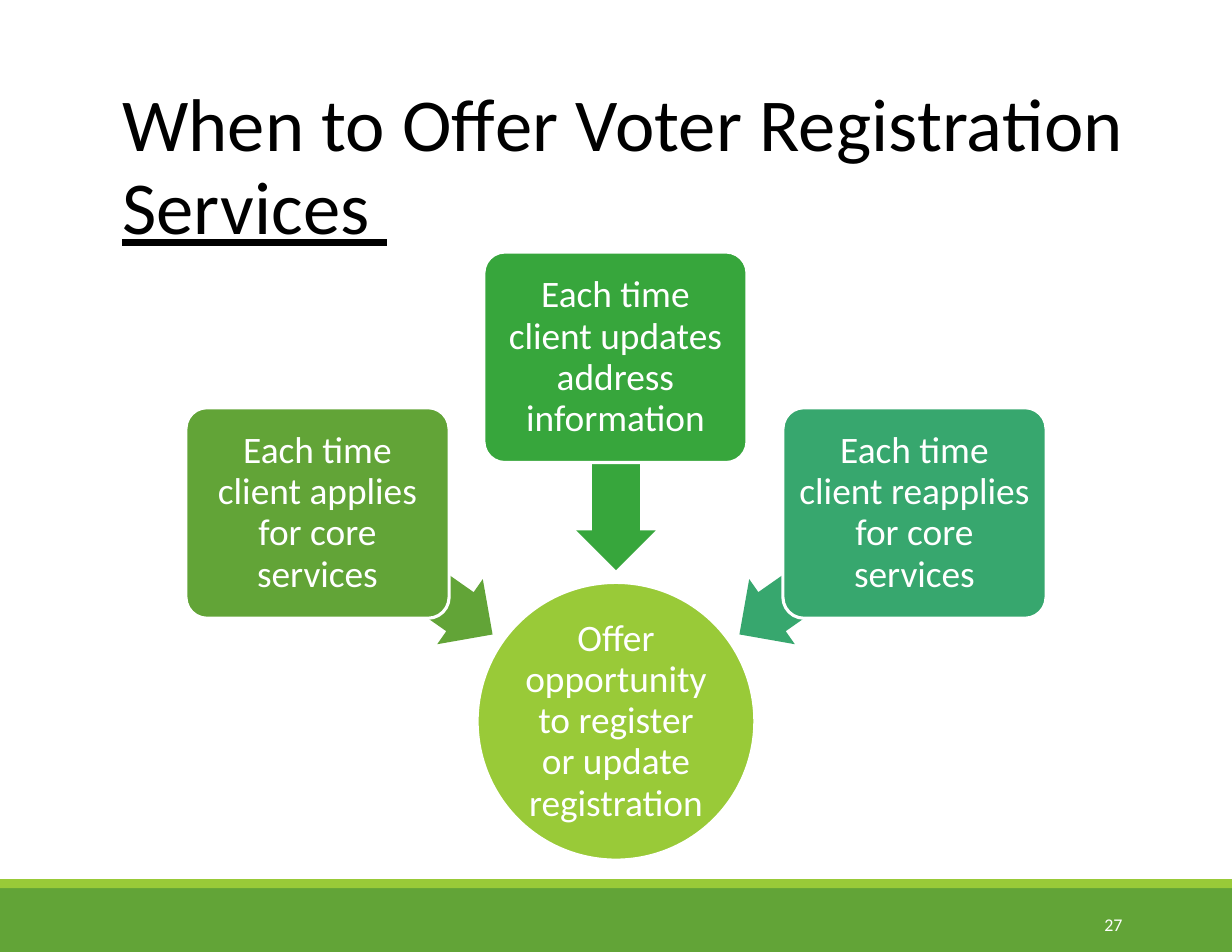
from pptx import Presentation
from pptx.dml.color import RGBColor
from pptx.enum.shapes import MSO_SHAPE
from pptx.enum.text import MSO_ANCHOR, PP_ALIGN
from pptx.util import Inches, Pt

RECTANGLE = MSO_SHAPE.RECTANGLE
ROUNDED = MSO_SHAPE.ROUNDED_RECTANGLE
OVAL = MSO_SHAPE.OVAL
DOWN_ARROW = MSO_SHAPE.DOWN_ARROW
MIDDLE = MSO_ANCHOR.MIDDLE
CENTER = PP_ALIGN.CENTER

GREEN, LIME, WHITE, BLACK = "62A437", "99CA38", "FFFFFF", "000000"

prs = Presentation()
prs.slide_width, prs.slide_height = Inches(11), Inches(8.5)
slide = prs.slides.add_slide(prs.slide_layouts[6])


def add_block(kind, left, top, width, height, fill, outline=None):
    block = slide.shapes.add_shape(
        kind, Inches(left), Inches(top), Inches(width), Inches(height))
    block.shadow.inherit = False
    block.fill.solid()
    block.fill.fore_color.rgb = RGBColor.from_string(fill)
    if outline:
        block.line.color.rgb = RGBColor.from_string(outline)
        block.line.width = Pt(2)
    else:
        block.line.fill.background()
    return block


def write(shape, text, size, color, inset, spacing=0, align=None, line_spacing=None):
    frame = shape.text_frame
    frame.word_wrap = True
    frame.margin_left = frame.margin_right = Inches(inset)
    frame.margin_top = frame.margin_bottom = 0
    frame.text = text
    for paragraph in frame.paragraphs:
        paragraph.alignment = align
        paragraph.line_spacing = line_spacing
        for run in paragraph.runs:
            run.font.name = "Calibri"
            run.font.size = Pt(size)
            run.font.color.rgb = RGBColor.from_string(color)
            # letter spacing in hundredths of a point
            run.font._element.set("spc", str(spacing))


# Footer bands
add_block(RECTANGLE, 0, 7.93, 11, 0.57, GREEN)
add_block(RECTANGLE, 0, 7.85, 11, 0.08, LIME)

# Title
title = slide.shapes.add_textbox(Inches(1.09), Inches(0.75), Inches(9.3), Inches(1.35))
write(title, "When to Offer Voter Registration\nServices ", 48, BLACK, 0,
      spacing=10, line_spacing=Pt(53.3))
title.text_frame.paragraphs[1].runs[0].font.underline = True

# Outcome circle
outcome = add_block(OVAL, 4.26, 5.2, 2.48, 2.48, LIME, WHITE)
outcome.text_frame.vertical_anchor = MIDDLE
write(outcome, "Offer opportunity to register or update registration",
      24, WHITE, 0.05, 0, CENTER, 0.92)

# Occasions: text, colour, card left and top, text inset, arrow centre and rotation
occasions = [
    ("Each time client applies for core services", GREEN, 1.66, 3.64, 0.19, 3.62, 5.12, -55),
    ("Each time client updates address information", "37A63C", 4.32, 2.25, 0.12, 5.5, 4.14, 0),
    ("Each time client reapplies for core services", "37A76E", 6.99, 3.64, 0.08, 7.38, 5.12, 55),
]
ARROW_WIDTH, ARROW_LENGTH = 0.71, 1.9
for text, color, left, top, inset, arrow_x, arrow_y, rotation in occasions:
    arrow = add_block(DOWN_ARROW, arrow_x - ARROW_WIDTH / 2, arrow_y - ARROW_LENGTH / 2,
                      ARROW_WIDTH, ARROW_LENGTH, color)
    arrow.adjustments[0] = 0.6
    arrow.adjustments[1] = 0.5
    arrow.rotation = rotation

    card = add_block(ROUNDED, left, top, 2.35, 1.88, color, WHITE)
    card.adjustments[0] = 0.1
    card.text_frame.vertical_anchor = MIDDLE
    write(card, text, 24, WHITE, inset, 0, CENTER, 0.92)

# Page number
page_number = slide.shapes.add_textbox(Inches(9.86), Inches(8.16), Inches(0.34), Inches(0.2))
write(page_number, "27", 11.5, WHITE, 0)

prs.save("out.pptx")
